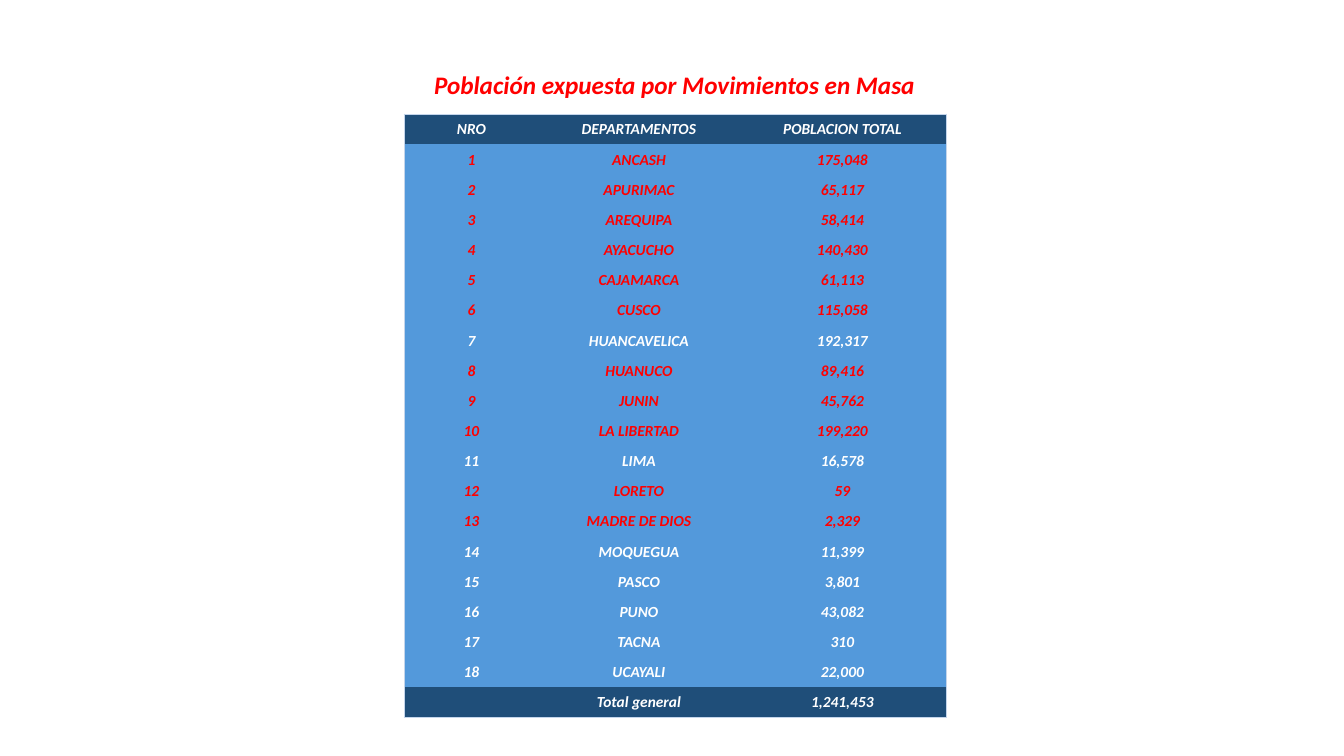
from lxml import etree
from pptx import Presentation
from pptx import util as u
from pptx.dml.color import RGBColor
from pptx.enum import text
from pptx.oxml.ns import qn

PX = u.Inches(1) / 100.8
COLORS = {"red": "FF0000", "white": "FFFFFF", "navy": "1F4E79", "blue": "5399DB", "edge": "C4D5EB"}


def px(length):
    return u.Emu(round(length * PX))


def add_span(para, words, size, color):
    para.alignment = text.PP_ALIGN.CENTER
    span = para.add_run()
    span.text = words
    span.font.name = "Calibri"
    span.font.size = u.Pt(size)
    span.font.bold = True
    span.font.italic = True
    span.font.color.rgb = RGBColor.from_string(COLORS[color])


deck = Presentation()
deck.slide_width, deck.slide_height = px(1344), px(756)
page = deck.slides.add_slide(deck.slide_layouts[6])

title = page.shapes.add_textbox(px(421), px(64), px(507), px(40)).text_frame
title.word_wrap = False
title.auto_size = text.MSO_AUTO_SIZE.SHAPE_TO_FIT_TEXT
add_span(title.paragraphs[0], "Población expuesta por Movimientos en Masa", 18, "red")

departments = [
    ("ANCASH", "175,048"),
    ("APURIMAC", "65,117"),
    ("AREQUIPA", "58,414"),
    ("AYACUCHO", "140,430"),
    ("CAJAMARCA", "61,113"),
    ("CUSCO", "115,058"),
    ("HUANCAVELICA", "192,317"),
    ("HUANUCO", "89,416"),
    ("JUNIN", "45,762"),
    ("LA LIBERTAD", "199,220"),
    ("LIMA", "16,578"),
    ("LORETO", "59"),
    ("MADRE DE DIOS", "2,329"),
    ("MOQUEGUA", "11,399"),
    ("PASCO", "3,801"),
    ("PUNO", "43,082"),
    ("TACNA", "310"),
    ("UCAYALI", "22,000"),
]
red_rows = {1, 2, 3, 4, 5, 6, 8, 9, 10, 12, 13}
rows = [("NRO", "DEPARTAMENTOS", "POBLACION TOTAL")]
rows += [(str(number), *entry) for number, entry in enumerate(departments, 1)]
rows += [("", "Total general", "1,241,453")]
widths = [135, 200, 207]
table_height = 604
last_row, last_column = len(rows) - 1, len(widths) - 1

frame = page.shapes.add_table(len(rows), len(widths), px(404), px(114), px(sum(widths)), px(table_height))
table = frame.table
table.first_row = False
table.horz_banding = False
for column, width in zip(table.columns, widths):
    column.width = px(width)

for r, values in enumerate(rows):
    table.rows[r].height = px(table_height / len(rows))
    for c, value in enumerate(values):
        cell = table.cell(r, c)
        cell.vertical_anchor = text.MSO_ANCHOR.MIDDLE
        cell.margin_left = cell.margin_right = cell.margin_top = px(1)
        cell.margin_bottom = 0
        properties = cell._tc.get_or_add_tcPr()
        outer_sides = {"lnL": c == 0, "lnR": c == last_column, "lnT": r == 0, "lnB": r == last_row}
        for side, is_outer in outer_sides.items():
            line = etree.SubElement(properties, qn(f"a:{side}"), w=str(u.Pt(0.5)))
            if is_outer:
                paint = etree.SubElement(line, qn("a:solidFill"))
                etree.SubElement(paint, qn("a:srgbClr"), val=COLORS["edge"])
            else:
                etree.SubElement(line, qn("a:noFill"))
        cell.fill.solid()
        fill = "navy" if r in (0, last_row) else "blue"
        cell.fill.fore_color.rgb = RGBColor.from_string(COLORS[fill])
        para = cell.text_frame.paragraphs[0]
        if value:
            add_span(para, value, 11, "red" if r in red_rows else "white")
        else:
            etree.SubElement(para._p, qn("a:endParaRPr"), sz="1100")

deck.save("out.pptx")
